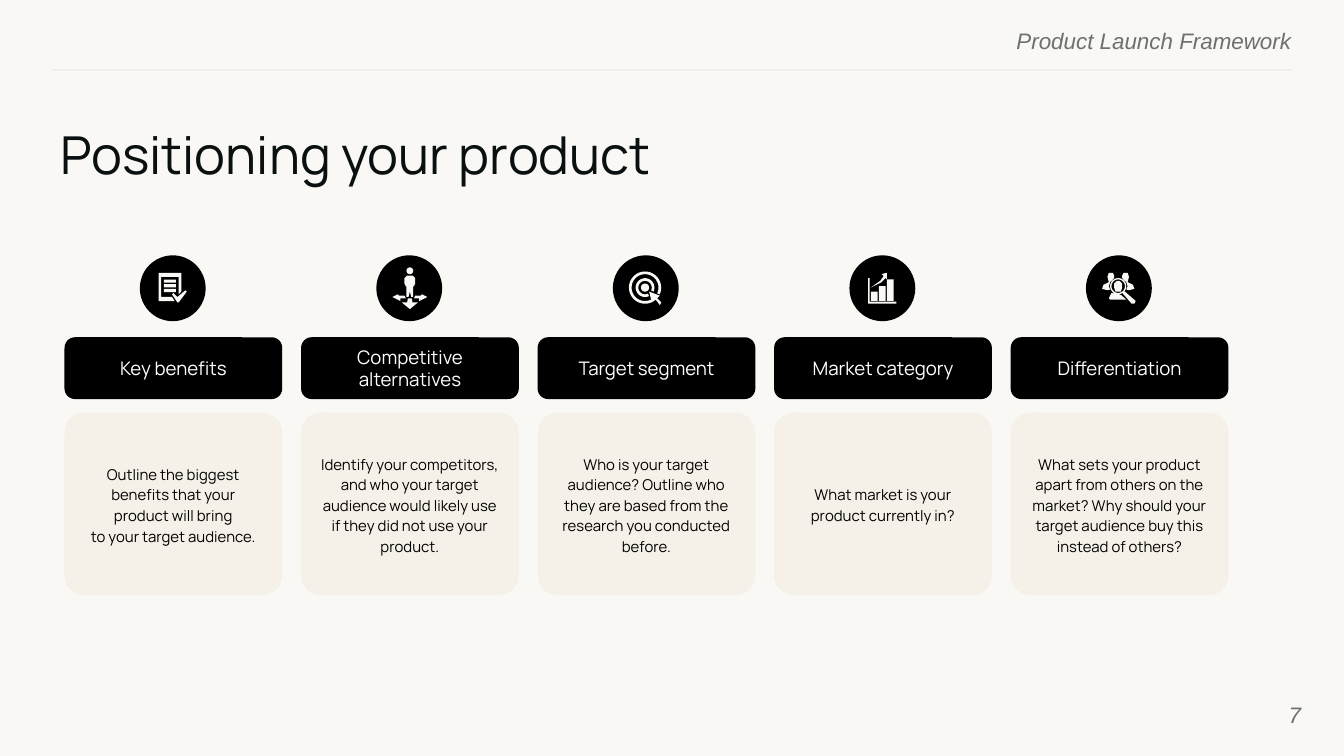
from math import cos, radians, sin

from lxml import etree
from pptx import Presentation
from pptx.dml.color import RGBColor
from pptx.enum.shapes import MSO_CONNECTOR, MSO_SHAPE
from pptx.enum.text import MSO_ANCHOR, PP_ALIGN
from pptx.oxml.ns import qn
from pptx.util import Inches, Pt

LEFT, CENTER, RIGHT = PP_ALIGN.LEFT, PP_ALIGN.CENTER, PP_ALIGN.RIGHT
TOP, MIDDLE = MSO_ANCHOR.TOP, MSO_ANCHOR.MIDDLE
ROUNDED, OVAL = MSO_SHAPE.ROUNDED_RECTANGLE, MSO_SHAPE.OVAL
STRAIGHT = MSO_CONNECTOR.STRAIGHT

COLORS = {
    "paper": "F9F8F5",
    "rule": "EFEFEF",
    "muted": "6C706F",
    "title": "09100F",
    "black": "000000",
    "white": "FFFFFF",
    "card": "F5F1E8",
}


def color(name):
    return RGBColor.from_string(COLORS[name])


def write(shape, text, size, ink, font="Manrope", italic=False, align=LEFT,
          anchor=TOP, insets=(0, 0), line_spacing=None, space_after=None):
    frame = shape.text_frame
    frame.word_wrap = True
    frame.vertical_anchor = anchor
    frame.margin_left = frame.margin_right = Inches(insets[0])
    frame.margin_top = frame.margin_bottom = Inches(insets[1])
    para = frame.paragraphs[0]
    para.text = text
    para.alignment = align
    para.line_spacing = line_spacing
    para.space_after = space_after
    for span in para.runs:
        span.font.name = font
        span.font.size = Pt(size)
        span.font.italic = italic
        span.font.color.rgb = color(ink)


def add_text(page, box, text, **style):
    write(page.shapes.add_textbox(*map(Inches, box)), text, **style)


def paint(shape, fill):
    shape.shadow.inherit = False
    shape.fill.solid()
    shape.fill.fore_color.rgb = color(fill)
    shape.line.fill.background()


def add_panel(page, box, fill, kind=ROUNDED, corner=None):
    panel = page.shapes.add_shape(kind, *map(Inches, box))
    paint(panel, fill)
    if corner is not None:
        panel.adjustments[0] = corner
    return panel


# Icon outlines are in hundredths of an inch from the corner of their disc.
def bar(left, top, width, height):
    right, bottom = left + width, top + height
    return [(left, top), (right, top), (right, bottom), (left, bottom)]


def arc(x, y, radius, start=0, end=360):
    angles = [radians(start + (end - start) * step / 36) for step in range(37)]
    return [(x + radius * cos(a), y + radius * sin(a)) for a in angles]


def open_ring(x, y, outer, inner, start, end):
    return arc(x, y, outer, start, end) + arc(x, y, inner, end, start)


def mirror(outline, axis):
    return [(2 * axis - x, y) for x, y in outline]


def checklist_icon():
    sheet = [(14, 13), (31, 13), (31, 27), (29, 29), (29, 16), (16, 16),
             (16, 31), (24, 31), (26, 34), (14, 34)]
    tick = [(34, 26), (35, 27), (29, 35), (28, 35), (24, 29), (25, 28), (28, 31)]
    return [sheet, tick] + [bar(18, 18 + 3.5 * row, 9, 2.3) for row in range(3)]


def choices_icon():
    down = [(26.5, 32), (27, 35), (31, 35), (25, 40), (19, 35), (23, 35), (23.5, 32)]
    right = [(34, 29), (38, 31), (32, 34), (32, 32), (28, 32), (29, 30), (33, 30)]
    body = [(23, 15), (27, 15), (29, 17), (29, 21), (28, 23), (27.5, 23),
            (27.5, 31), (26, 31), (25, 27), (24, 31), (22.5, 31), (22.5, 23),
            (22, 23), (21, 21), (21, 17)]
    return [arc(25, 11.5, 2.5), body, down, right, mirror(right, 25)]


def target_icon():
    cursor = [(27, 27), (35, 30), (33, 32), (36, 35), (35, 37), (32, 33), (29, 35)]
    rings = [open_ring(24, 24, outer, outer - 2, 65, 385) for outer in (7, 12)]
    return [arc(24, 24, 3), cursor] + rings


def growth_icon():
    axes = [(14, 17), (15, 17), (15, 34.5), (35, 34.5), (35, 36), (14, 36)]
    arrow = [(28, 13), (28, 18), (27, 17), (24, 20), (16, 24), (23, 19),
             (25.5, 15.5), (24, 14)]
    return [axes, arrow, bar(16, 27, 5, 7), bar(22, 23, 5, 11), bar(28, 18, 5, 16)]


def audience_icon():
    face = [(23, 19), (25, 19), (27, 21), (27, 24), (26, 27), (22, 27), (21, 24), (21, 21)]
    handle = [(27, 28), (29, 27), (37, 34), (36, 36), (34, 36)]
    chest = [(19, 28), (26, 29.5), (30, 33), (18, 33), (17, 32)]
    person = [(28, 13), (31, 13), (32, 16), (31, 20), (35, 22), (36, 25),
              (32, 26), (30, 25.5), (31, 23), (30, 20), (27, 17), (27, 15)]
    return [arc(24, 23, 6), arc(24, 23, 5), face, handle, chest,
            person, mirror(person, 24)]


def add_icon(page, left, top, outlines):
    add_panel(page, (left, top, 0.49, 0.49), "black", OVAL)
    outlines = [[(Inches(x / 100), Inches(y / 100)) for x, y in outline]
                for outline in outlines]
    builder = page.shapes.build_freeform(*outlines[0][0])
    for outline in outlines:
        if outline is not outlines[0]:
            builder.move_to(*outline[0])
        builder.add_line_segments(outline[1:], close=True)
    paint(builder.convert_to_shape(Inches(left), Inches(top)), "paper")


def add_column(page, left, top, icon, heading, body):
    """Stack an icon, a heading bar and a text card."""
    label = add_panel(page, (left, top + 0.61, 1.62, 0.46), "black", corner=0.17)
    write(label, heading, size=10, ink="white", align=CENTER, anchor=MIDDLE,
          insets=(0.1, 0.05))
    card = add_panel(page, (left, top + 1.17, 1.62, 1.36), "card", corner=0.11)
    write(card, body, size=8, ink="black", align=CENTER, anchor=MIDDLE,
          insets=(0.1, 0.05), line_spacing=1.15)
    add_icon(page, left + 0.56, top, icon())


def add_frame(page, left, top, width):
    """Add the running header, its rule and the page number."""
    right = left + width
    muted = {"size": 12, "ink": "muted", "font": "Arial", "italic": True, "align": RIGHT}
    add_text(page, (right - 3.85, top, 3.85, 0.18), "Product Launch Framework", **muted)
    rule = page.shapes.add_connector(
        STRAIGHT, Inches(right), Inches(top + 0.32), Inches(left), Inches(top + 0.32))
    rule.line.color.rgb = color("rule")
    rule.line.width = Pt(0.75)
    etree.SubElement(rule.element.spPr, qn("a:effectLst"))
    add_text(page, (right - 0.53, top + 4.9, 0.6, 0.43), "7", anchor=MIDDLE, **muted)


COLUMNS = [
    (checklist_icon, "Key benefits",
     "Outline the biggest benefits that your product will bring\nto your target audience."),
    (choices_icon, "Competitive alternatives",
     "Identify your competitors, and who your target audience would likely use "
     "if they did not use your product."),
    (target_icon, "Target segment",
     "Who is your target audience? Outline who they are based from the research "
     "you conducted before."),
    (growth_icon, "Market category", "What market is your product currently in?"),
    (audience_icon, "Differentiation",
     "What sets your product apart from others on the market? Why should your "
     "target audience buy this instead of others?"),
]


def main():
    deck = Presentation()
    deck.slide_width = Inches(10)
    deck.slide_height = deck.slide_width * 9 // 16
    page = deck.slides.add_slide(deck.slide_layouts[6])
    page.background.fill.solid()
    page.background.fill.fore_color.rgb = color("paper")
    add_frame(page, 0.39, 0.2, 9.22)
    add_text(page, (0.45, 0.91, 9.23, 0.51), "Positioning your product",
             size=28, ink="title", space_after=Pt(10))
    for index, column in enumerate(COLUMNS):
        add_column(page, 0.48 + 1.76 * index, 1.9, *column)
    deck.save("out.pptx")


if __name__ == "__main__":
    main()
